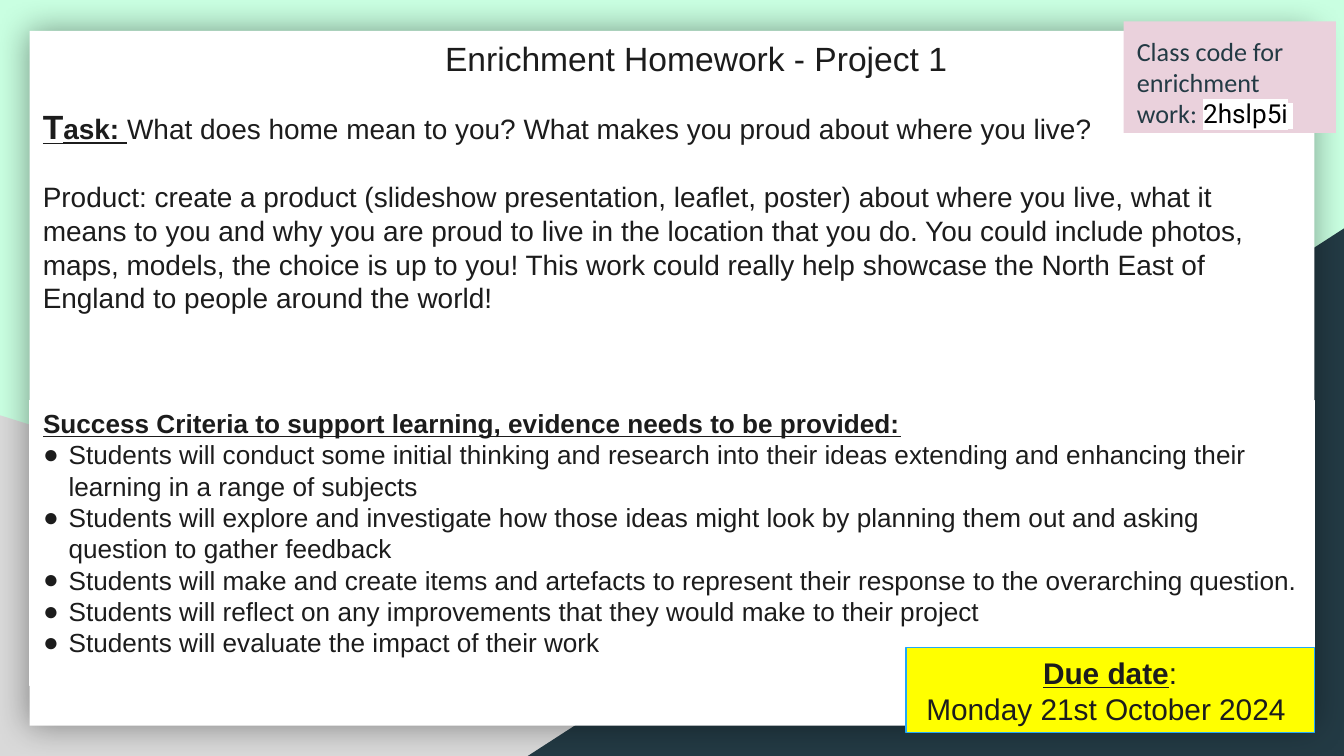
"""Builds the enrichment homework slide with its task, criteria and due date."""

from dataclasses import dataclass
from typing import Optional

from lxml.etree import SubElement
from pptx import Presentation
from pptx.dml.color import RGBColor
from pptx.enum.shapes import MSO_SHAPE
from pptx.enum.text import MSO_ANCHOR, MSO_AUTO_SIZE, PP_ALIGN
from pptx.oxml.ns import qn
from pptx.util import Inches, Pt

COLOURS = {
    "mint": "C9FFE1",
    "grey": "D9D9D9",
    "navy": "233A44",
    "white": "FFFFFF",
    "ink": "1C1C1C",
    "yellow": "FFFF00",
    "blue": "23A7F9",
    "pink": "EAD1DC",
    "black": "000000",
}


@dataclass
class Area:
    left: float
    top: float
    width: float
    height: float


@dataclass
class Block:
    area: Area
    kind: MSO_SHAPE
    fill: str
    line: Optional[str] = None
    flipped: bool = False


@dataclass
class Span:
    text: str
    strong: bool = False
    size: Optional[float] = None
    font: Optional[str] = None
    colour: Optional[str] = None
    highlight: Optional[str] = None


@dataclass
class Para:
    spans: list[Span]
    size: float
    font: str = "Arial"
    colour: str = "ink"
    align: PP_ALIGN = PP_ALIGN.LEFT
    before: float = 0
    bullet: bool = False


LEFT, WIDTH = 0.22, 9.56
BACKDROP = [
    Block(Area(0, 3.09, 8.06, 2.54), MSO_SHAPE.RIGHT_TRIANGLE, "grey"),
    Block(Area(3.92, 1.7, 6.08, 3.93), MSO_SHAPE.RIGHT_TRIANGLE, "navy", flipped=True),
]
PANEL = Block(Area(LEFT, 0.23, WIDTH, 5.17), MSO_SHAPE.RECTANGLE, "white")
DUE_DATE = Block(Area(6.74, 4.82, 3.04, 0.63), MSO_SHAPE.RECTANGLE, "yellow", "blue")
CLASS_CODE = Block(Area(8.36, 0.16, 1.58, 0.83), MSO_SHAPE.RECTANGLE, "pink")

TITLE = [Para([Span("Enrichment Homework - Project 1 ")], 18, align=PP_ALIGN.CENTER)]
TASK = [
    Para([
        Span("T", strong=True, size=18),
        Span("ask: ", strong=True),
        Span("What does home mean to you? What makes you proud about where you live?"),
    ], 15),
    Para([Span(
        "Product: create a product (slideshow presentation, leaflet, poster) about where "
        "you live, what it means to you and why you are proud to live in the location that "
        "you do. You could include photos, maps, models, the choice is up to you! This work "
        "could really help showcase the North East of England to people around the world!"
    )], 15, before=18),
]
CRITERIA = [
    "Students will conduct some initial thinking and research into their ideas extending "
    "and enhancing their learning in a range of subjects",
    "Students will explore and investigate how those ideas might look by planning them out "
    "and asking question to gather feedback",
    "Students will make and create items and artefacts to represent their response to the "
    "overarching question.",
    "Students will reflect on any improvements that they would make to their project",
    "Students will evaluate the impact of their work",
]
SUCCESS = [
    Para([Span("Success Criteria to support learning, evidence needs to be provided:", True)], 14),
    *[Para([Span(criterion)], 14, bullet=True) for criterion in CRITERIA],
]
DUE_TEXT = [
    Para([Span("Due date", strong=True), Span(":")], 16, align=PP_ALIGN.CENTER),
    Para([Span("Monday 21st October 2024 ")], 16, align=PP_ALIGN.CENTER),
]
CODE_TEXT = [Para([
    Span("Class code for enrichment work: "),
    Span("2hslp5i", font="Roboto", colour="black", highlight="white"),
    Span(" ", size=12, font="Roboto", colour="black", highlight="white"),
], 14, font="Calibri", colour="navy")]


def rgb(name: str) -> RGBColor:
    """Return the named colour."""
    return RGBColor.from_string(COLOURS[name])


def place(shape, area: Area) -> None:
    """Move and size a shape."""
    shape.left, shape.top = Inches(area.left), Inches(area.top)
    shape.width, shape.height = Inches(area.width), Inches(area.height)


def add_block(page, block: Block):
    """Draw a filled or outlined preset shape."""
    shape = page.shapes.add_shape(block.kind, 0, 0, 0, 0)
    place(shape, block.area)
    shape.shadow.inherit = False
    shape.fill.solid()
    shape.fill.fore_color.rgb = rgb(block.fill)
    set_line(shape, block.line)
    if block.flipped:
        shape._element.spPr.find(qn("a:xfrm")).set("flipH", "1")
    return shape


def set_line(shape, colour: Optional[str]) -> None:
    """Give a shape a thin outline, or none."""
    if colour is None:
        shape.line.fill.background()
    else:
        shape.line.color.rgb = rgb(colour)
        shape.line.width = Pt(0.75)


def add_glow_shadow(shape) -> None:
    """Put a soft centred shadow around a shape."""
    effects = shape._element.spPr.find(qn("a:effectLst"))
    shadow = SubElement(effects, qn("a:outerShdw"), blurRad=str(Pt(18)), dist="0", dir="0",
                        algn="ctr", rotWithShape="0")
    colour = SubElement(shadow, qn("a:srgbClr"), val=COLOURS["black"])
    SubElement(colour, qn("a:alpha"), val="40000")


def set_bullet(paragraph, shown: bool) -> None:
    """Set the indent and bullet of a paragraph."""
    properties = paragraph._p.get_or_add_pPr()
    properties.set("marL", str(Inches(0.19) if shown else 0))
    properties.set("indent", str(Inches(-0.22) if shown else 0))
    defaults = properties.find(qn("a:defRPr"))
    if shown:
        colour = SubElement(properties, qn("a:buClr"))
        SubElement(colour, qn("a:srgbClr"), val=COLOURS["ink"])
        SubElement(properties, qn("a:buChar"), char="●")
    else:
        SubElement(properties, qn("a:buNone"))
    properties.append(defaults)


def add_span(paragraph, span: Span) -> None:
    """Add a run with only its own formatting."""
    run = paragraph.add_run()
    run.text = span.text
    if span.strong:
        run.font.bold = run.font.underline = True
    if span.size:
        run.font.size = Pt(span.size)
    if span.font:
        run.font.name = span.font
    if span.colour:
        run.font.color.rgb = rgb(span.colour)
    if span.highlight:
        properties = run.font._element
        mark = SubElement(properties, qn("a:highlight"))
        SubElement(mark, qn("a:srgbClr"), val=COLOURS[span.highlight])
        properties.find(qn("a:latin")).addprevious(mark)


def write(shape, paras: list[Para], inset: float = 0.05) -> None:
    """Fill a shape with formatted paragraphs from the top."""
    frame = shape.text_frame
    frame.word_wrap = True
    frame.auto_size = MSO_AUTO_SIZE.NONE
    frame.vertical_anchor = MSO_ANCHOR.TOP
    frame.margin_left = frame.margin_right = Inches(0.1)
    frame.margin_top = frame.margin_bottom = Inches(inset)
    for index, para in enumerate(paras):
        paragraph = frame.add_paragraph() if index else frame.paragraphs[0]
        paragraph.alignment = para.align
        paragraph.space_before, paragraph.space_after = Pt(para.before), Pt(0)
        paragraph.font.size, paragraph.font.name = Pt(para.size), para.font
        paragraph.font.color.rgb = rgb(para.colour)
        set_bullet(paragraph, para.bullet)
        for span in para.spans:
            add_span(paragraph, span)


def main() -> None:
    """Build and save the slide."""
    deck = Presentation()
    deck.slide_width, deck.slide_height = Inches(10), Inches(10) * 9 // 16
    page = deck.slides.add_slide(deck.slide_layouts[1])
    page.background.fill.solid()
    page.background.fill.fore_color.rgb = rgb("mint")
    title, body = page.shapes.title, page.placeholders[1]
    for block in BACKDROP:
        add_block(page, block)
    add_glow_shadow(add_block(page, PANEL))
    place(title, Area(0.65, 0.23, 9.13, 0.43))
    write(title, TITLE)
    task = page.shapes.add_textbox(0, 0, 0, 0)
    place(task, Area(LEFT, 0.74, WIDTH, 2.88))
    write(task, TASK)
    place(body, Area(LEFT, 2.98, WIDTH, 2.12))
    set_line(body, "white")
    write(body, SUCCESS)
    for shape in (title, task, body):
        page.shapes._spTree.append(shape._element)
    write(add_block(page, DUE_DATE), DUE_TEXT)
    write(add_block(page, CLASS_CODE), CODE_TEXT, inset=0.1)
    deck.save("out.pptx")


if __name__ == "__main__":
    main()
